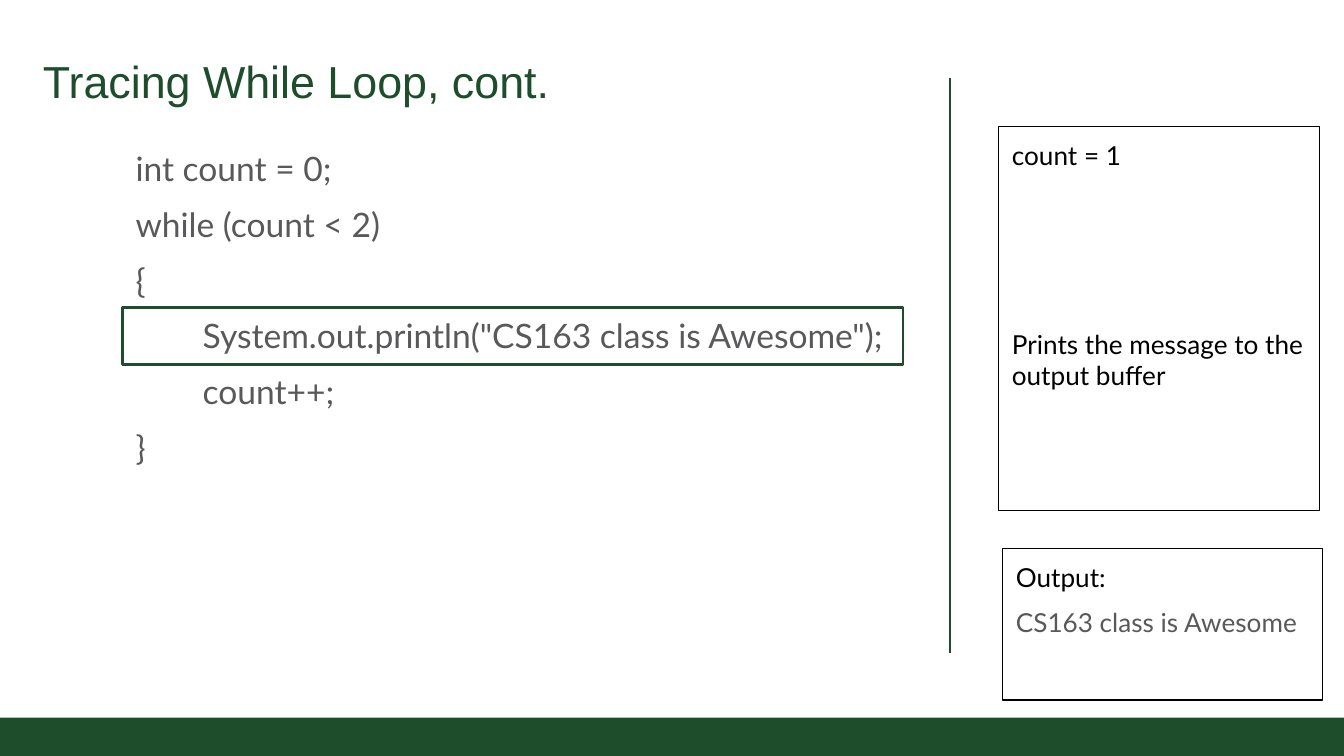
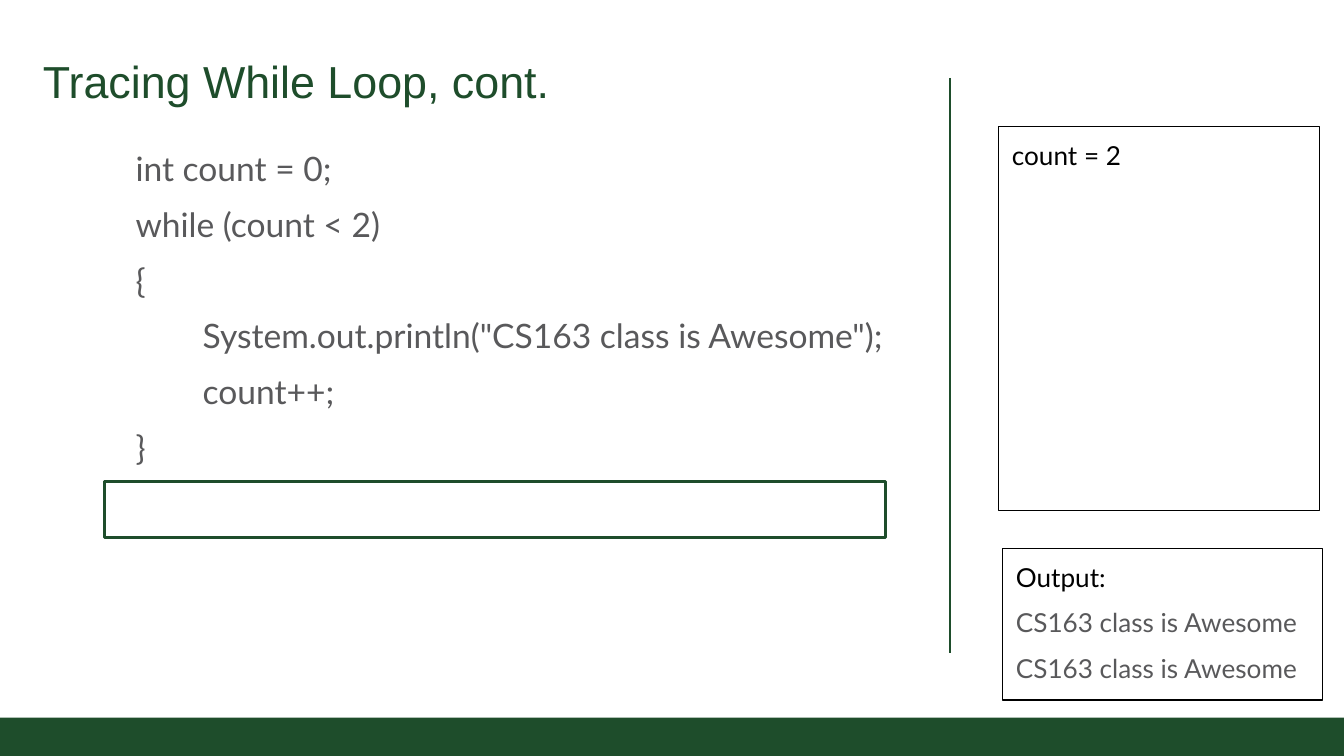
from pptx import Presentation
from pptx.dml.color import RGBColor
from pptx.enum.shapes import MSO_CONNECTOR, MSO_SHAPE
from pptx.enum.text import MSO_ANCHOR, PP_ALIGN
from pptx.oxml.ns import qn
from pptx.util import Inches, Pt
from lxml import etree

RECT = MSO_SHAPE.RECTANGLE
STRAIGHT = MSO_CONNECTOR.STRAIGHT
TOP, BOTTOM = MSO_ANCHOR.TOP, MSO_ANCHOR.BOTTOM
LEFT = PP_ALIGN.LEFT

GREEN = RGBColor(0x1E, 0x4D, 0x2B)
GRAY = RGBColor(0x59, 0x59, 0x5B)
BLACK = RGBColor(0, 0, 0)

WIDTH = Inches(10)
HEIGHT = WIDTH * 9 // 16

HEAD_FONT, BODY_FONT = "Arial", "Lato"
TITLE = "Tracing While Loop, cont."
MESSAGE = "CS163 class is Awesome"
CODE = [  # text, indent level
    ("int count = 0;", 0),
    ("while (count < 2)", 0),
    ("{", 0),
    (f'System.out.println("{MESSAGE}");', 1),
    ("count++;", 1),
    ("}", 0),
]
TAB = 0.5
NOTE_GAP = 84


def set_frame(shape, inset=0.1, anchor=TOP):
    frame = shape.text_frame
    frame.word_wrap = True
    frame.vertical_anchor = anchor
    frame.margin_left = frame.margin_right = Inches(inset)
    frame.margin_top = frame.margin_bottom = Inches(inset)
    return frame


def add_line(frame, text, size, color, font=BODY_FONT, before=0, spacing=1, level=0):
    """Add one paragraph, using the frame's empty first one if it is free."""
    first = frame.paragraphs[0]
    if first.runs:
        para = frame.add_paragraph()
        para.space_before = Pt(before)
    else:
        para = first
    para.alignment = LEFT
    para.line_spacing = spacing
    if level:
        para._p.get_or_add_pPr().set("indent", str(Inches(level * TAB)))
    run = para.add_run()
    run.text = text
    run.font.name = font
    run.font.size = Pt(size)
    run.font.color.rgb = color


def add_rect(slide, left, top, width, height, fill=None, line=None, weight=0.75):
    rect = slide.shapes.add_shape(
        RECT, Inches(left), Inches(top), Inches(width), Inches(height))
    rect.shadow.inherit = False
    if fill is None:
        rect.fill.background()
    else:
        rect.fill.solid()
        rect.fill.fore_color.rgb = fill
    if line is None:
        rect.line.fill.background()
    else:
        rect.line.color.rgb = line
        rect.line.width = Pt(weight)
    return rect


def add_text(slide, left, top, width, height):
    return slide.shapes.add_textbox(
        Inches(left), Inches(top), Inches(width), Inches(height))


def add_title(slide):
    frame = set_frame(add_text(slide, 0.25, 0.14, 5.37, 0.73), 0.07, BOTTOM)
    add_line(frame, TITLE, 24, GREEN, HEAD_FONT)


def add_code(slide):
    frame = set_frame(add_text(slide, 0.91, 0.94, 6.05, 3.24))
    for text, level in CODE:
        add_line(frame, text, 18, GRAY, before=4, spacing=1.2, level=level)


def add_rule(slide):
    rule = slide.shapes.add_connector(
        STRAIGHT, Inches(7.07), Inches(0.58), Inches(7.07), Inches(4.86))
    rule.line.color.rgb = GREEN
    rule.line.width = Pt(0.75)
    etree.SubElement(rule._element.spPr, qn("a:effectLst"))


def add_state(slide, count, note):
    frame = set_frame(add_rect(slide, 7.43, 0.94, 2.39, 2.86, line=BLACK))
    add_line(frame, f"count = {count}", 14, BLACK)
    if note:
        add_line(frame, note, 14, BLACK, before=NOTE_GAP)


def add_output(slide, prints):
    frame = set_frame(add_rect(slide, 7.46, 4.08, 2.38, 1.13, line=BLACK))
    add_line(frame, "Output:", 14, BLACK)
    for _ in range(prints):
        add_line(frame, MESSAGE, 14, GRAY, before=4, spacing=1.2)


def add_step(deck, mark, count, prints, note=None):
    """Add one trace slide; mark is the left and top of the highlight."""
    slide = deck.slides.add_slide(deck.slide_layouts[6])
    add_rect(slide, 0, 5.34, 10.02, 0.29, fill=GREEN)
    add_code(slide)
    add_rect(slide, *mark, 5.81, 0.42, line=GREEN, weight=1.5)
    add_rule(slide)
    add_state(slide, count, note)
    add_output(slide, prints)
    add_title(slide)


def main():
    deck = Presentation()
    deck.slide_width = WIDTH
    deck.slide_height = HEIGHT
    add_step(deck, (0.91, 2.29), 1, 1, "Prints the message to the output buffer")
    add_step(deck, (0.78, 3.58), 2, 2)
    deck.save("out.pptx")


if __name__ == "__main__":
    main()
